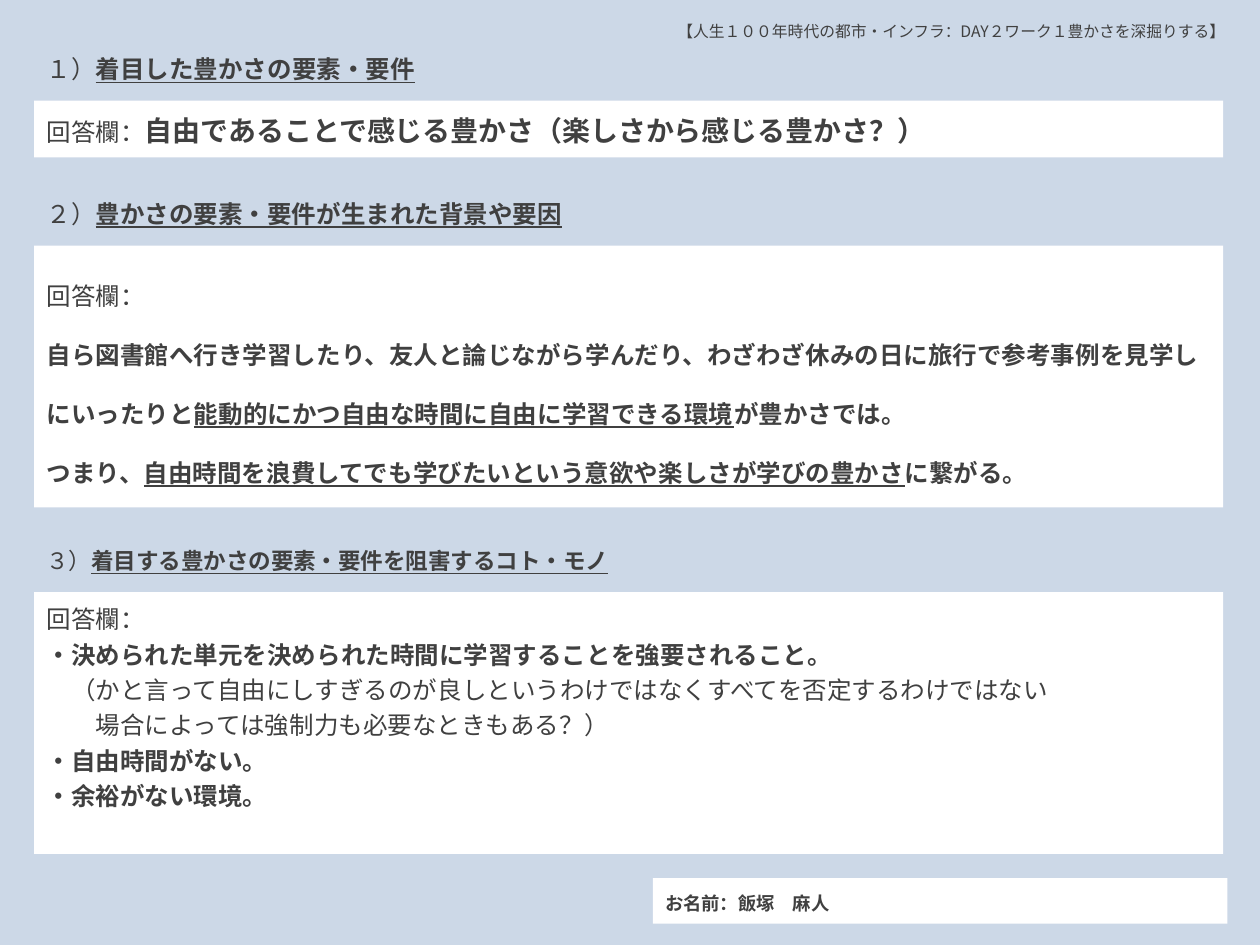
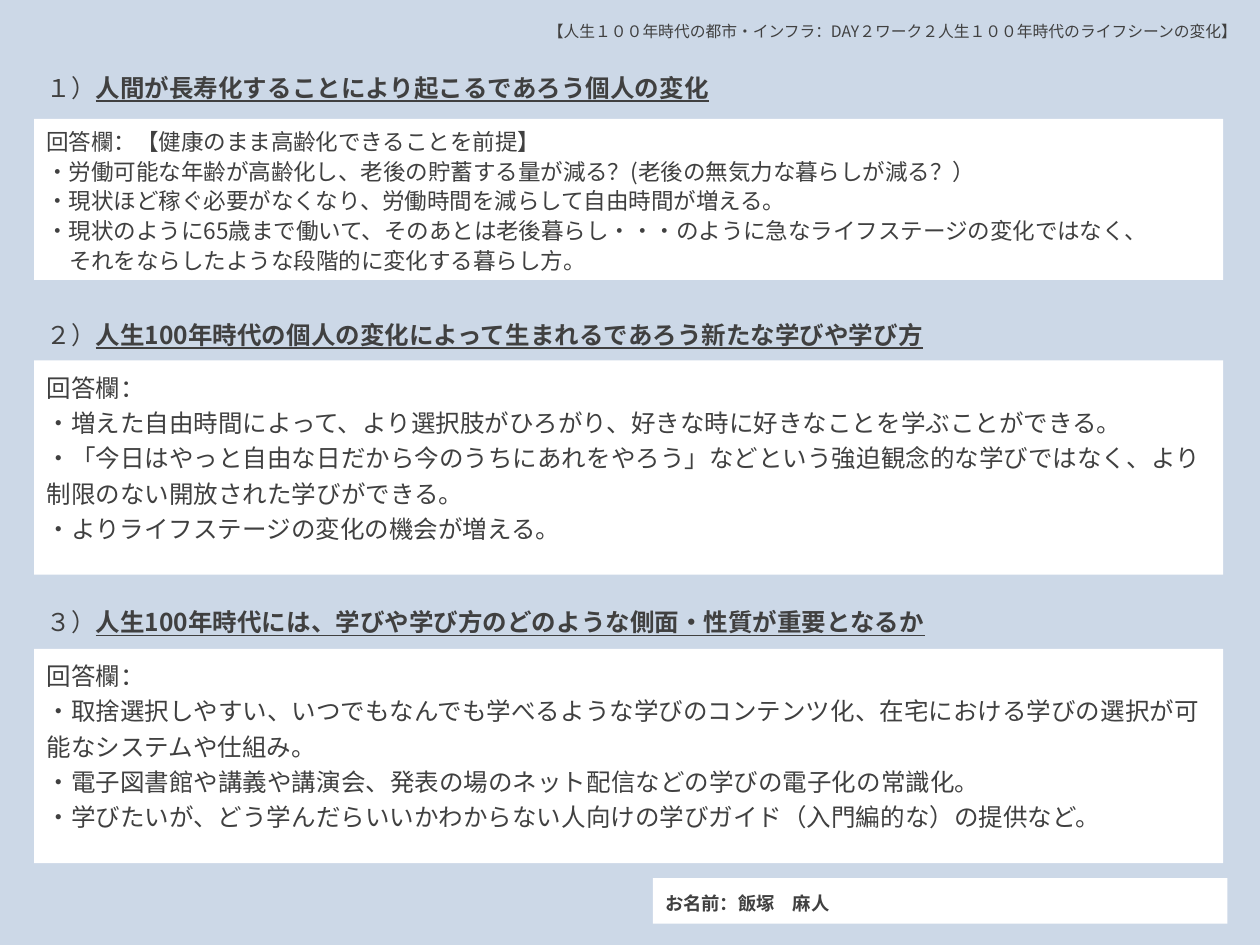
from pptx import Presentation
from pptx.dml.color import RGBColor
from pptx.enum.shapes import MSO_SHAPE
from pptx.enum.text import MSO_ANCHOR, MSO_AUTO_SIZE, PP_ALIGN
from pptx.oxml.ns import qn
from pptx.util import Pt
from lxml.etree import SubElement

COLORS = {"back": "CCD8E7", "box": "FFFFFF", "text": "404040"}
FONT = "Noto Sans CJK JP"
LEFT, WIDTH = 19.5, 679.5
BODY, SMALL = 14, 12.9
TITLE_ONLY, BLANK = 5, 6


class Sheet:
    def __init__(self, deck):
        self.deck = deck
        self.slide = None

    def color(self, name):
        return RGBColor.from_string(COLORS[name])

    def start(self, layout):
        self.slide = self.deck.slides.add_slide(self.deck.slide_layouts[layout])
        back = self.slide.background.fill
        back.solid()
        back.fore_color.rgb = self.color("back")

    def paint(self, shape):
        shape.fill.solid()
        shape.fill.fore_color.rgb = self.color("box")
        shape.line.fill.background()

    def letter(self, shape, lines, size=BODY, lead=1.2, indents=None, anchor=MSO_ANCHOR.TOP):
        frame = shape.text_frame
        frame.word_wrap = True
        frame.auto_size = MSO_AUTO_SIZE.NONE
        frame.vertical_anchor = anchor
        for index, line in enumerate(lines):
            para = frame.add_paragraph() if index else frame.paragraphs[0]
            runs = [(line, "")] if isinstance(line, str) else line
            tall = max(run[2] if len(run) > 2 else size for run in runs)
            para.alignment = PP_ALIGN.LEFT
            para.line_spacing = Pt(round(tall * 1.2 * lead, 1))
            para.space_before = para.space_after = Pt(0)
            if indents and index in indents:
                props = para._p.get_or_add_pPr()
                props.set("marL", str(Pt(indents[index])))
                props.set("indent", "0")
            for text, marks, *own in runs:
                run = para.add_run()
                run.text = text
                font = run.font
                font.name = FONT
                font.size = Pt(own[0] if own else size)
                font.bold = "b" in marks
                font.underline = "u" in marks
                font.color.rgb = self.color("text")
                SubElement(font._element, qn("a:ea")).set("typeface", FONT)

    def title(self, top, height, lines):
        shape = self.slide.shapes.title
        shape.left, shape.top = Pt(LEFT), Pt(top)
        shape.width, shape.height = Pt(WIDTH), Pt(height)
        self.paint(shape)
        self.letter(shape, lines)

    def box(self, top, height, lines, left=LEFT, width=WIDTH, **style):
        shape = self.slide.shapes.add_shape(
            MSO_SHAPE.RECTANGLE, Pt(left), Pt(top), Pt(width), Pt(height))
        shape.shadow.inherit = False
        self.paint(shape)
        self.letter(shape, lines, **style)

    def label(self, left, top, width, height, runs, size):
        shape = self.slide.shapes.add_textbox(Pt(left), Pt(top), Pt(width), Pt(height))
        self.letter(shape, [runs], size)

    def head(self, top, width, number, text, size=BODY):
        self.label(LEFT, top, width, 32.4, [(number, ""), (text, "bu")], size)

    def banner(self, left, text):
        self.label(left, 6.5, 720 - left, 22, [(text, "")], 9)

    def name(self):
        self.box(501.8, 26, [[("お名前：飯塚　麻人", "b")]], left=373, width=328.4,
                 size=10.5, anchor=MSO_ANCHOR.MIDDLE)


def wealth(sheet):
    sheet.start(TITLE_ONLY)
    sheet.title(57.5, 32.4, [[
        ("回答欄：", ""), ("自由であることで感じる豊かさ（楽しさから感じる豊かさ？）", "b", 16)]])
    sheet.name()
    sheet.head(23.8, 231, "１）", "着目した豊かさの要素・要件")
    sheet.head(106.6, 343.5, "２）", "豊かさの要素・要件が生まれた背景や要因")
    sheet.box(140.4, 149.6, [
        "回答欄：",
        [("自ら図書館へ行き学習したり、友人と論じながら学んだり、"
          "わざわざ休みの日に旅行で参考事例を見学しにいったりと", "b"),
         ("能動的にかつ自由な時間に自由に学習できる環境", "bu"),
         ("が豊かさでは。", "b")],
        [("つまり、", "b"),
         ("自由時間を浪費してでも学びたいという意欲や楽しさが学びの豊かさ", "bu"),
         ("に繋がる。", "b")],
    ], lead=2)
    sheet.head(306, 348.5, "３）", "着目する豊かさの要素・要件を阻害するコト・モノ", SMALL)
    sheet.box(338.4, 149.6, [
        "回答欄：",
        [("・決められた単元を決められた時間に学習することを強要されること。", "b")],
        "（かと言って自由にしすぎるのが良しというわけではなくすべてを否定するわけではない",
        "場合によっては強制力も必要なときもある？）",
        [("・自由時間がない。", "b")],
        [("・余裕がない環境。", "b")],
    ], indents={2: BODY, 3: 2 * BODY})
    sheet.banner(380, "【人生１００年時代の都市・インフラ：DAY２ワーク１豊かさを深掘りする】")


def change(sheet):
    sheet.start(BLANK)
    sheet.name()
    sheet.head(34.6, 403, "１）", "人間が長寿化することにより起こるであろう個人の変化")
    sheet.head(175.7, 603.4, "２）",
               "人生100年時代の個人の変化によって生まれるであろう新たな学びや学び方")
    sheet.head(340, 603.4, "３）",
               "人生100年時代には、学びや学び方のどのような側面・性質が重要となるか")
    sheet.box(370.8, 122.4, [
        "回答欄：",
        "・取捨選択しやすい、いつでもなんでも学べるような学びのコンテンツ化、"
        "在宅における学びの選択が可能なシステムや仕組み。",
        "・電子図書館や講義や講演会、発表の場のネット配信などの学びの電子化の常識化。",
        "・学びたいが、どう学んだらいいかわからない人向けの学びガイド（入門編的な）の提供など。",
    ])
    sheet.banner(306, "【人生１００年時代の都市・インフラ：DAY２ワーク２人生１００年時代のライフシーンの変化】")
    sheet.box(68, 92, [
        "回答欄：【健康のまま高齢化できることを前提】",
        "・労働可能な年齢が高齢化し、老後の貯蓄する量が減る？(老後の無気力な暮らしが減る？）",
        "・現状ほど稼ぐ必要がなくなり、労働時間を減らして自由時間が増える。",
        "・現状のように65歳まで働いて、そのあとは老後暮らし・・・のように急なライフステージの変化ではなく、",
        "それをならしたような段階的に変化する暮らし方。",
    ], size=SMALL, lead=1.1, indents={4: SMALL})
    sheet.box(206, 122.4, [
        "回答欄：",
        "・増えた自由時間によって、より選択肢がひろがり、好きな時に好きなことを学ぶことができる。",
        "・「今日はやっと自由な日だから今のうちにあれをやろう」などという強迫観念的な学びではなく、"
        "より制限のない開放された学びができる。",
        "・よりライフステージの変化の機会が増える。",
    ])


def main():
    deck = Presentation()
    deck.slide_width, deck.slide_height = Pt(720), Pt(540)
    sheet = Sheet(deck)
    wealth(sheet)
    change(sheet)
    deck.save("out.pptx")


if __name__ == "__main__":
    main()
